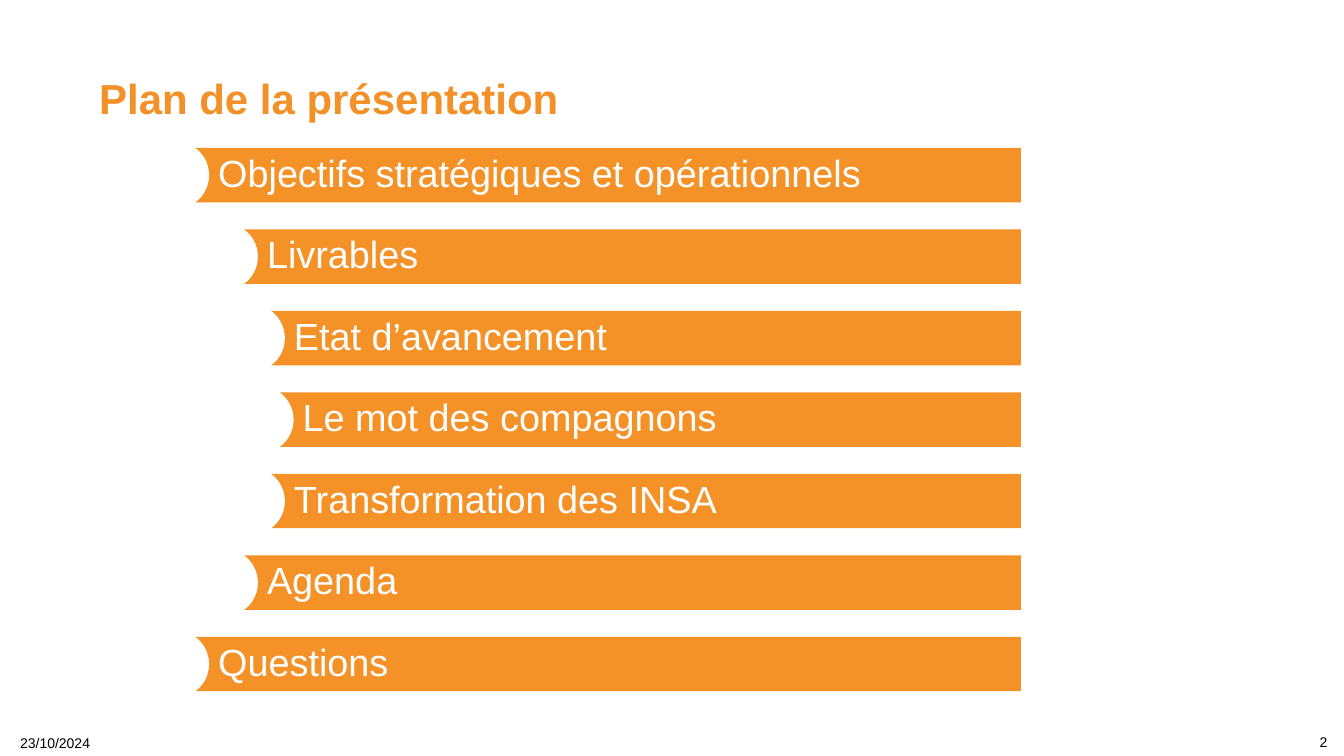
import pptx
import pptx.dml.color
import pptx.enum.shapes
import pptx.enum.text
import pptx.util

Cm = pptx.util.Cm
SHAPE = pptx.enum.shapes.MSO_SHAPE
ALIGN = pptx.enum.text.PP_ALIGN
ANCHOR = pptx.enum.text.MSO_ANCHOR


def colour(hex_string):
    return pptx.dml.color.RGBColor.from_string(hex_string)


class AgendaSlide:
    font = "Arial"
    title_colour = "F39128"
    bar_colour = "F49127"
    white = "FFFFFF"
    black = "000000"

    def __init__(self, deck):
        self.page = deck.slides.add_slide(deck.slide_layouts[5])

    def add_text(self, shape, text, size, hex_string, margins, bold=False,
                 align=ALIGN.LEFT, anchor=ANCHOR.MIDDLE, spacing=1.0):
        frame = shape.text_frame
        frame.word_wrap = True
        frame.auto_size = pptx.enum.text.MSO_AUTO_SIZE.NONE
        frame.vertical_anchor = anchor
        (frame.margin_left, frame.margin_top,
         frame.margin_right, frame.margin_bottom) = map(Cm, margins)
        para = frame.paragraphs[0]
        para.alignment = align
        para.line_spacing = spacing
        span = para.add_run()
        span.text = text
        span.font.name = self.font
        span.font.size = pptx.util.Pt(size)
        span.font.bold = bold
        span.font.color.rgb = colour(hex_string)

    def title(self, text, left, top, width, height):
        box = self.page.shapes.title
        box.left, box.top, box.width, box.height = map(Cm, (left, top, width, height))
        self.add_text(box, text, 30, self.title_colour, (0, 0, 0, 0), bold=True,
                      anchor=ANCHOR.TOP, spacing=0.9)

    def shape(self, kind, fill, left, top, width, height):
        shape = self.page.shapes.add_shape(kind, *map(Cm, (left, top, width, height)))
        shape.shadow.inherit = False
        shape.fill.solid()
        shape.fill.fore_color.rgb = colour(fill)
        shape.line.fill.background()
        return shape

    def bar(self, text, left, top, right, height, notch):
        """Bar whose left end is hollowed by a white disc."""
        bar = self.shape(SHAPE.RECTANGLE, self.bar_colour,
                         left, top, right - left, height)
        self.add_text(bar, text, 27, self.white, (1.08, 0.17, 0.17, 0.17), spacing=0.9)
        self.shape(SHAPE.OVAL, self.white, left - notch / 2,
                   top + (height - notch) / 2, notch, notch)

    def footer(self, text, left, top, align):
        box = self.page.shapes.add_textbox(*map(Cm, (left, top, 7.62, 0.69)))
        self.add_text(box, text, 10, self.black, (0.1, 0.1, 0.1, 0.1), align=align)


def main():
    deck = pptx.Presentation()
    deck.slide_width, deck.slide_height = Cm(33.87), Cm(19.05)
    slide = AgendaSlide(deck)

    # Title
    slide.title("Plan de la présentation", 2.5, 1.96, 21.43, 1.42)

    # Agenda bars, indented along an arc that mirrors around the middle one
    topics = ["Objectifs stratégiques et opérationnels", "Livrables",
              "Etat d’avancement", "Le mot des compagnons",
              "Transformation des INSA", "Agenda", "Questions"]
    indents = [4.42, 5.65, 6.33, 6.55]
    first_top, last_top = 3.73, 16.05
    step = (last_top - first_top) / (len(topics) - 1)
    for row, topic in enumerate(topics):
        left = indents[min(row, len(topics) - 1 - row)]
        slide.bar(topic, left, first_top + row * step,
                  right=25.73, height=1.37, notch=1.7)

    # Footer
    slide.footer("2", 25.93, 18.36, ALIGN.RIGHT)
    slide.footer("23/10/2024", 0.41, 18.38, ALIGN.LEFT)

    deck.save("out.pptx")


if __name__ == "__main__":
    main()
